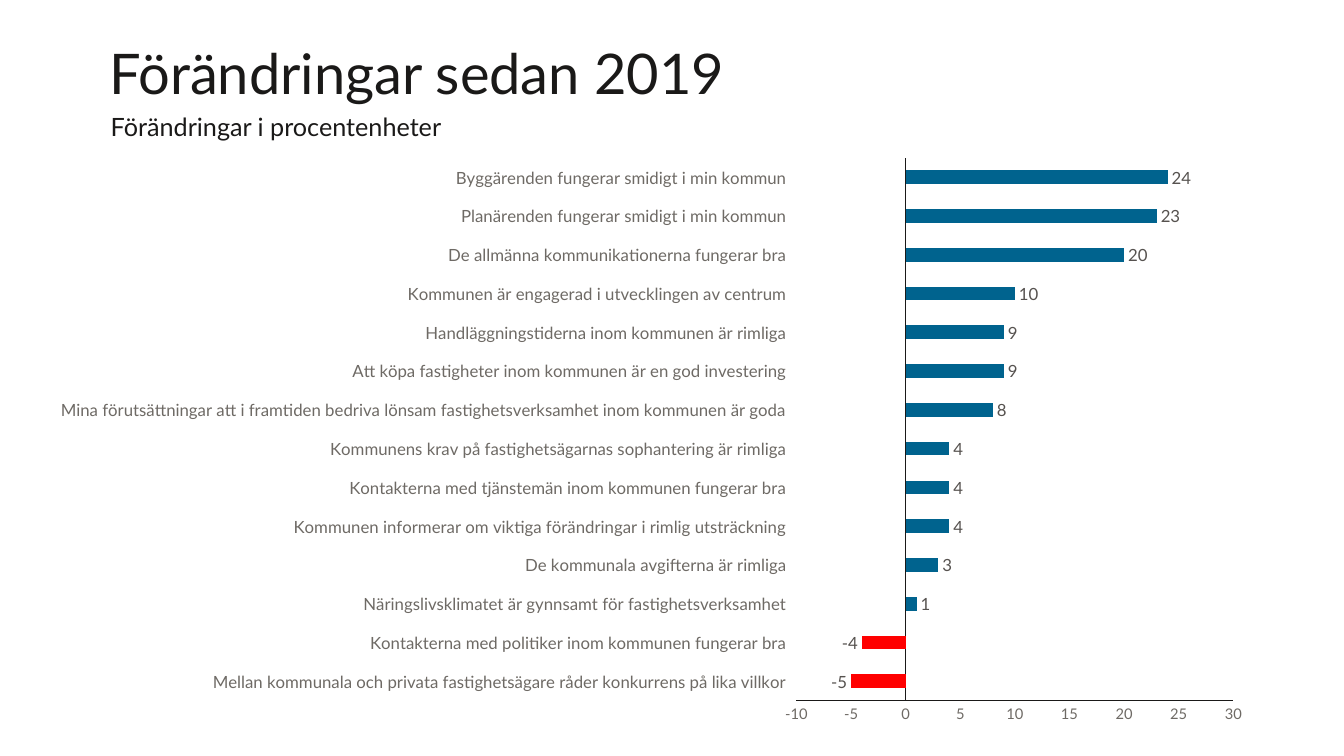
from lxml import etree
from pptx import Presentation
from pptx import util as u
from pptx.chart.data import CategoryChartData
from pptx.dml.color import RGBColor
from pptx.enum import chart as charts, text
from pptx.oxml.ns import qn

FONT = "Lato"
COLOURS = {"ink": "1A1918", "axis": "6E6A65", "label": "56524F", "gain": "00638E", "loss": "FF0000"}
CHANGES = [
    ("Mellan kommunala och privata fastighetsägare råder konkurrens på lika villkor", -5),
    ("Kontakterna med politiker inom kommunen fungerar bra", -4),
    ("Näringslivsklimatet är gynnsamt för fastighetsverksamhet", 1),
    ("De kommunala avgifterna är rimliga", 3),
    ("Kommunen informerar om viktiga förändringar i rimlig utsträckning", 4),
    ("Kontakterna med tjänstemän inom kommunen fungerar bra", 4),
    ("Kommunens krav på fastighetsägarnas sophantering är rimliga", 4),
    ("Mina förutsättningar att i framtiden bedriva lönsam fastighetsverksamhet inom kommunen är goda", 8),
    ("Att köpa fastigheter inom kommunen är en god investering", 9),
    ("Handläggningstiderna inom kommunen är rimliga", 9),
    ("Kommunen är engagerad i utvecklingen av centrum", 10),
    ("De allmänna kommunikationerna fungerar bra", 20),
    ("Planärenden fungerar smidigt i min kommun", 23),
    ("Byggärenden fungerar smidigt i min kommun", 24),
]
PLOT_AREA = {"x": 0.617, "y": 0.02, "w": 0.355, "h": 0.922}


def colour(name):
    """Return the named colour."""
    return RGBColor.from_string(COLOURS[name])


def style_font(font, size, name):
    """Set typeface, size and colour of a font."""
    font.name = FONT
    font.size = u.Pt(size)
    font.bold = False
    font.color.rgb = colour(name)


def add_heading(page, box, words, size, anchor, inset, spacing):
    """Add one line of heading text in the given box."""
    frame = page.shapes.add_textbox(*map(u.Pt, box)).text_frame
    frame.word_wrap = True
    frame.vertical_anchor = anchor
    frame.margin_left = frame.margin_right = u.Pt(inset)
    frame.margin_top = frame.margin_bottom = u.Pt(inset / 2)
    frame.text = words
    para = frame.paragraphs[0]
    para.line_spacing = spacing
    style_font(para.runs[0].font, size, "ink")


def fix_plot_area(chart):
    """Place the inner plot area at fixed fractions of the chart."""
    plot_area = chart._chartSpace.chart.plotArea
    for old in plot_area.findall(qn("c:layout")):
        plot_area.remove(old)
    layout = etree.Element(qn("c:layout"))
    plot_area.insert(0, layout)
    manual = etree.SubElement(layout, qn("c:manualLayout"))
    settings = {"layoutTarget": "inner", "xMode": "edge", "yMode": "edge", **PLOT_AREA}
    for tag, value in settings.items():
        etree.SubElement(manual, qn(f"c:{tag}")).set("val", str(value))


def style_axis(axis, size):
    """Give an axis its line and text, without ticks or grid."""
    axis.has_major_gridlines = False
    axis.major_tick_mark = axis.minor_tick_mark = charts.XL_TICK_MARK.NONE
    axis.format.line.color.rgb = colour("ink")
    axis.format.line.width = u.Pt(0.75)
    style_font(axis.tick_labels.font, size, "axis")


def add_change_chart(page, box):
    """Add the bar chart of changes in the given box."""
    data = CategoryChartData(number_format="0")
    data.categories = [name for name, value in CHANGES]
    data.add_series("Series 1", [value for name, value in CHANGES])
    chart = page.shapes.add_chart(charts.XL_CHART_TYPE.BAR_CLUSTERED, *map(u.Pt, box), data).chart
    chart.has_legend = chart.has_title = False
    style_font(chart.font, 10, "ink")
    fix_plot_area(chart)

    style_axis(chart.category_axis, 12)
    chart.category_axis.tick_label_position = charts.XL_TICK_LABEL_POSITION.LOW
    scale = chart.value_axis
    style_axis(scale, 10.5)
    scale.minimum_scale, scale.maximum_scale, scale.major_unit = -10, 30, 5
    scale.tick_labels.number_format = "0"
    scale.tick_labels.number_format_is_linked = False

    plot = chart.plots[0]
    plot.gap_width = 182
    plot.vary_by_categories = False
    series = plot.series[0]
    series.invert_if_negative = False
    series.format.fill.solid()
    series.format.fill.fore_color.rgb = colour("gain")
    for index, (name, value) in enumerate(CHANGES):
        if value < 0:
            fill = series.points[index].format.fill
            fill.solid()
            fill.fore_color.rgb = colour("loss")

    labels = series.data_labels
    labels.show_value = True
    labels.position = charts.XL_LABEL_POSITION.OUTSIDE_END
    labels.number_format = "0"
    labels.number_format_is_linked = False
    style_font(labels.font, 12, "label")


def main():
    """Build the slide and save the deck."""
    deck = Presentation()
    deck.slide_width, deck.slide_height = u.Pt(960), u.Pt(540)
    page = deck.slides.add_slide(deck.slide_layouts[6])
    anchors = text.MSO_ANCHOR
    add_heading(page, (78, -8, 793, 83.5), "Förändringar sedan 2019", 40, anchors.BOTTOM, 0, 0.8)
    add_heading(page, (72, 75.6, 527, 29), "Förändringar i procentenheter", 18, anchors.TOP, 7.2, 1)
    add_change_chart(page, (26.6, 104.4, 879, 420.5))
    deck.save("out.pptx")


if __name__ == "__main__":
    main()
